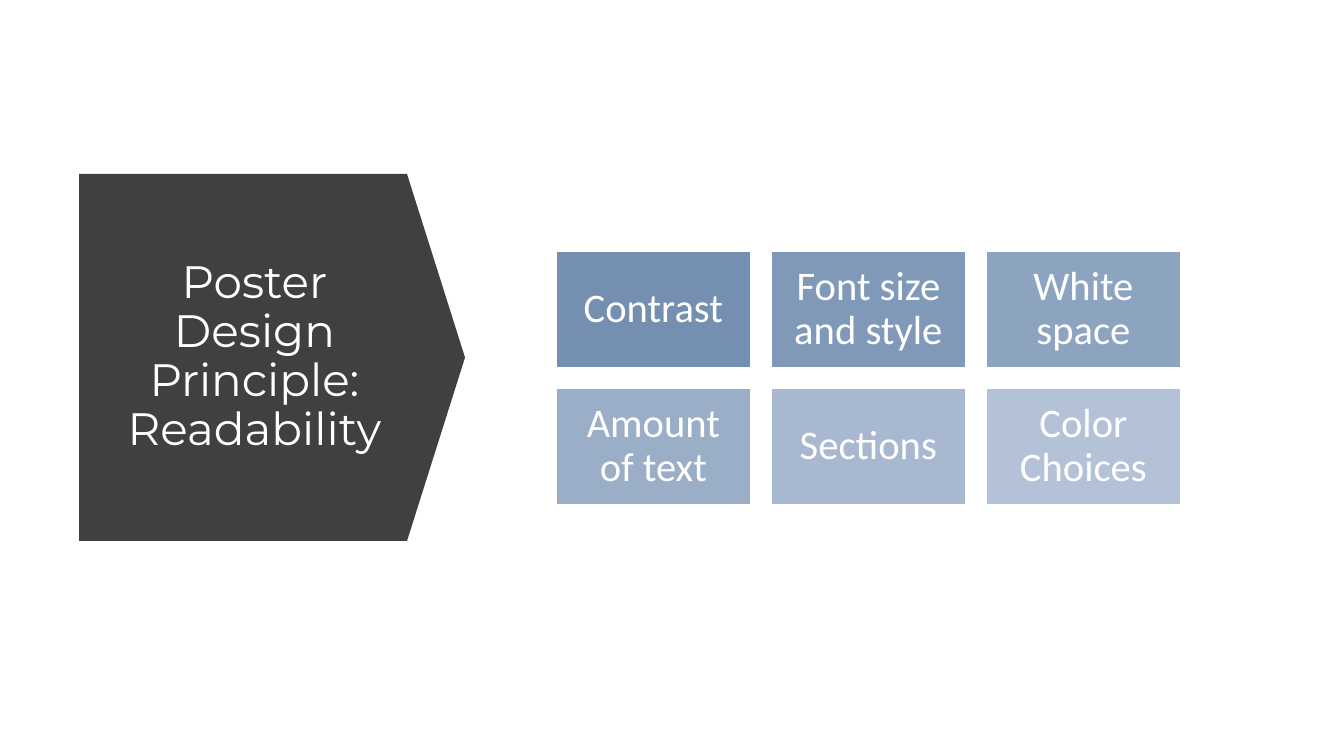
from dataclasses import dataclass

from pptx import Presentation
from pptx.dml.color import RGBColor
from pptx.enum.shapes import MSO_SHAPE as SHAPE
from pptx.enum.text import MSO_ANCHOR as ANCHOR, PP_ALIGN as ALIGN
from pptx.util import Emu, Pt

# Content
TITLE = "Poster Design Principle: Readability"
PRINCIPLES = [
    ("Contrast", "748FB0"),
    ("Font size and style", "8199B8"),
    ("White space", "8DA4C0"),
    ("Amount of text", "9AAEC8"),
    ("Sections", "A7B8D0"),
    ("Color Choices", "B3C2D7"),
]


@dataclass(frozen=True)
class Theme:
    white: str = "FFFFFF"
    arrow: str = "404040"
    title_font: str = "Montserrat"
    body_font: str = "Calibri"
    title_size: float = 32.4
    body_size: float = 29


THEME = Theme()

# Geometry in px
SLIDE = (1344, 756)
ARROW = (79, 174, 386, 367)
ARROW_TIP = 58
TITLE_BOX = (98, 217, 313, 281)
GRID_LEFT, GRID_TOP, COLUMNS = 556, 251, 3
TILE_W, TILE_H, GAP = 195, 117, 20
TILE_INSET = 12


def px(n):
    return Emu(round(n * 914400 / 100.8))


def rgb(color):
    return RGBColor.from_string(color)


def add_block(slide, kind, box, fill, line=None):
    sp = slide.shapes.add_shape(kind, *map(px, box))
    sp.shadow.inherit = False
    sp.fill.solid()
    sp.fill.fore_color.rgb = rgb(fill)
    if line:
        sp.line.color.rgb = rgb(line)
        sp.line.width = Pt(1)
    else:
        sp.line.fill.background()
    return sp


def write(sp, text, *, font, size, color, inset=None):
    tf = sp.text_frame
    tf.word_wrap = True
    tf.vertical_anchor = ANCHOR.MIDDLE
    if inset is not None:
        tf.margin_left = tf.margin_right = px(inset)
        tf.margin_top = tf.margin_bottom = px(inset)
    p = tf.paragraphs[0]
    p.alignment = ALIGN.CENTER
    p.line_spacing = 0.9
    r = p.add_run()
    r.text = text
    r.font.name = font
    r.font.size = Pt(size)
    r.font.color.rgb = rgb(color)


def main():
    prs = Presentation()
    prs.slide_width, prs.slide_height = map(px, SLIDE)
    slide = prs.slides.add_slide(prs.slide_layouts[6])

    # Title arrow
    arrow = add_block(slide, SHAPE.PENTAGON, ARROW, THEME.arrow)
    arrow.adjustments[0] = ARROW_TIP / ARROW[3]
    title = slide.shapes.add_textbox(*map(px, TITLE_BOX))
    write(title, TITLE, font=THEME.title_font, size=THEME.title_size,
          color=THEME.white)

    # Grid of principles
    for i, (label, fill) in enumerate(PRINCIPLES):
        row, col = divmod(i, COLUMNS)
        box = (GRID_LEFT + col * (TILE_W + GAP),
               GRID_TOP + row * (TILE_H + GAP), TILE_W, TILE_H)
        tile = add_block(slide, SHAPE.RECTANGLE, box, fill, THEME.white)
        write(tile, label, font=THEME.body_font, size=THEME.body_size,
              color=THEME.white, inset=TILE_INSET)

    prs.save("out.pptx")


if __name__ == "__main__":
    main()
